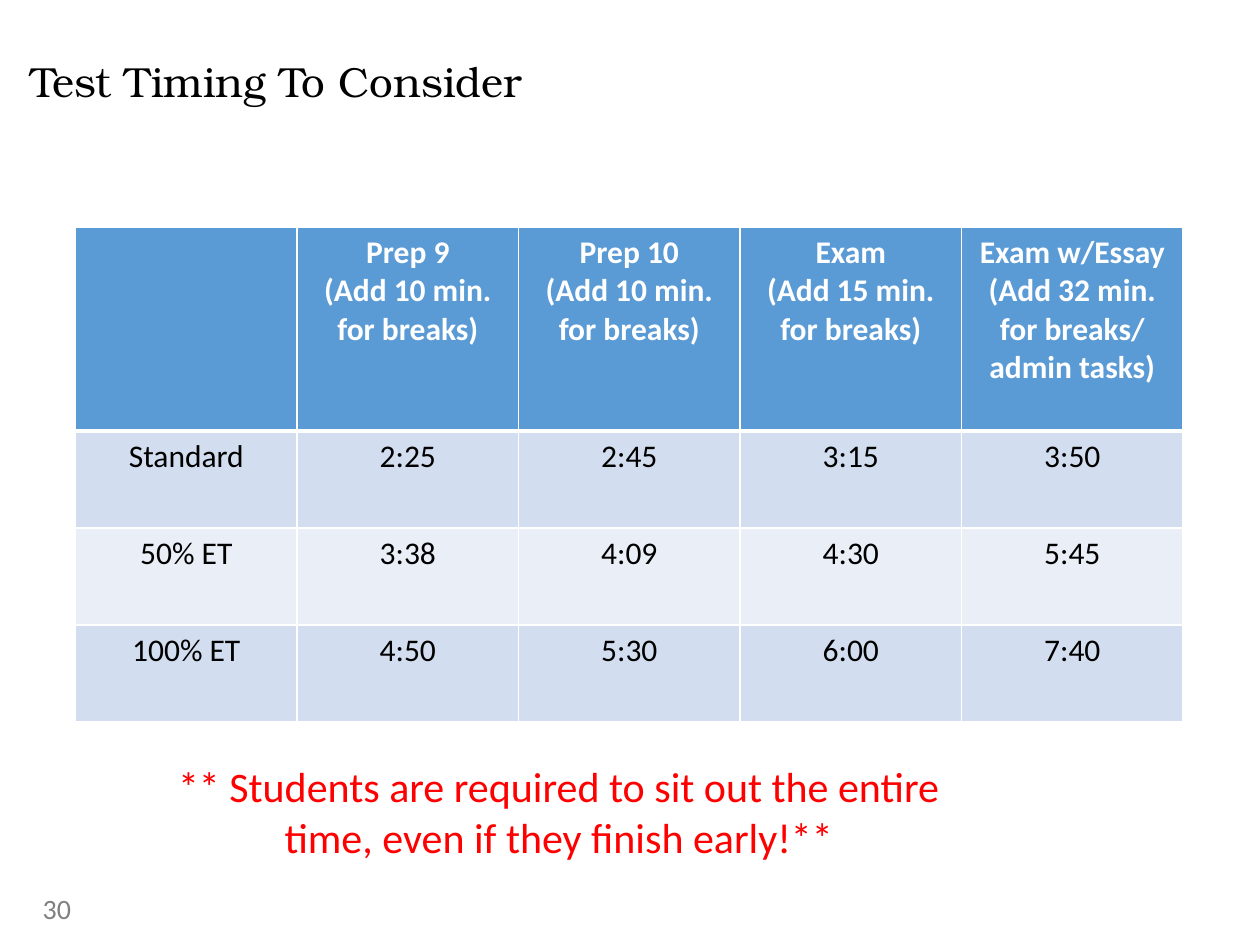
from lxml.etree import SubElement
from pptx import Presentation
from pptx.dml.color import RGBColor
from pptx.enum.text import MSO_ANCHOR, PP_ALIGN
from pptx.oxml.ns import qn
from pptx.util import Inches, Pt

COLORS = {
    "black": "000000", "white": "FFFFFF", "gray": "808080", "red": "FF0000",
    "header": "5B9BD5", "odd_band": "D2DEEF", "even_band": "EAEFF7",
}
TIMINGS = [
    ["", "Prep 9\n(Add 10 min. for breaks)", "Prep 10\n(Add 10 min. for breaks)",
     "Exam\n(Add 15 min. for breaks)", "Exam w/Essay\n(Add 32 min. for breaks/ admin tasks)"],
    ["Standard", "2:25", "2:45", "3:15", "3:50"],
    ["50% ET", "3:38", "4:09", "4:30", "5:45"],
    ["100% ET", "4:50", "5:30", "6:00", "7:40"],
]


def rgb(name):
    """Return the named colour."""
    return RGBColor.from_string(COLORS[name])


def write(frame, text, color, align=PP_ALIGN.LEFT, **font_format):
    """Fill a text frame with evenly formatted paragraphs."""
    frame.text = text
    for paragraph in frame.paragraphs:
        paragraph.alignment = align
        paragraph.font.color.rgb = rgb(color)
        for key, value in ({"name": "Calibri"} | font_format).items():
            setattr(paragraph.font, key, value)


def add_title(slide, left, top, width, height):
    """Place the slide title in its placeholder."""
    title = slide.shapes.title
    box = {"left": left, "top": top, "width": width, "height": height}
    for key, value in box.items():
        setattr(title, key, Inches(value))
    frame = title.text_frame
    layout = {"margin_left": 0, "margin_top": 0, "margin_right": 0, "margin_bottom": 0,
              "vertical_anchor": MSO_ANCHOR.MIDDLE, "word_wrap": True}
    for key, value in layout.items():
        setattr(frame, key, value)
    write(frame, "Test Timing To Consider", "black", name="TeX Gyre Bonum", size=Pt(24))
    frame.paragraphs[0].line_spacing = 0.9


def add_note(slide, box, text, color, **text_format):
    """Add a wrapped text box."""
    frame = slide.shapes.add_textbox(*map(Inches, box)).text_frame
    frame.word_wrap = True
    write(frame, text, color, **text_format)


def set_borders(cell, bottom):
    """Draw white cell borders, with the given bottom width in points."""
    properties = cell._tc.get_or_add_tcPr()
    widths = {"a:lnL": 1, "a:lnR": 1, "a:lnT": 1, "a:lnB": bottom}
    for tag, width in widths.items():
        line = SubElement(properties, qn(tag), w=str(Pt(width)))
        fill = SubElement(line, qn("a:solidFill"))
        SubElement(fill, qn("a:srgbClr"), val=COLORS["white"])


def add_timing_table(slide, left, top, width, header_height, row_height):
    """Add the banded table of test times."""
    rows, columns = len(TIMINGS), len(TIMINGS[0])
    height = header_height + row_height * (rows - 1)
    box = map(Inches, (left, top, width, height))
    table = slide.shapes.add_table(rows, columns, *box).table
    for row, values in enumerate(TIMINGS):
        is_header = row == 0
        table.rows[row].height = Inches(header_height if is_header else row_height)
        band = "header" if is_header else "odd_band" if row % 2 else "even_band"
        for column, value in enumerate(values):
            cell = table.cell(row, column)
            write(cell.text_frame, value, "white" if is_header else "black",
                  align=PP_ALIGN.CENTER, size=Pt(18), bold=is_header)
            set_borders(cell, bottom=3 if is_header else 1)
            cell.fill.solid()
            cell.fill.fore_color.rgb = rgb(band)


def main():
    """Build and save the slide."""
    deck = Presentation()
    deck.slide_width, deck.slide_height = Inches(10), Inches(7.5)
    slide = deck.slides.add_slide(deck.slide_layouts[5])
    add_title(slide, 0.24, 0.34, 9.51, 0.65)
    add_note(slide, (0.24, 7.03, 2.25, 0.4), "30", "gray", size=Pt(16))
    add_timing_table(slide, 0.6, 1.8, 8.79, 1.62, 0.77)
    add_note(slide, (1.17, 5.99, 6.53, 0.91),
             "** Students are required to sit out the entire time, even if they finish early!**",
             "red", align=PP_ALIGN.CENTER, size=Pt(24))
    deck.save("out.pptx")


if __name__ == "__main__":
    main()
